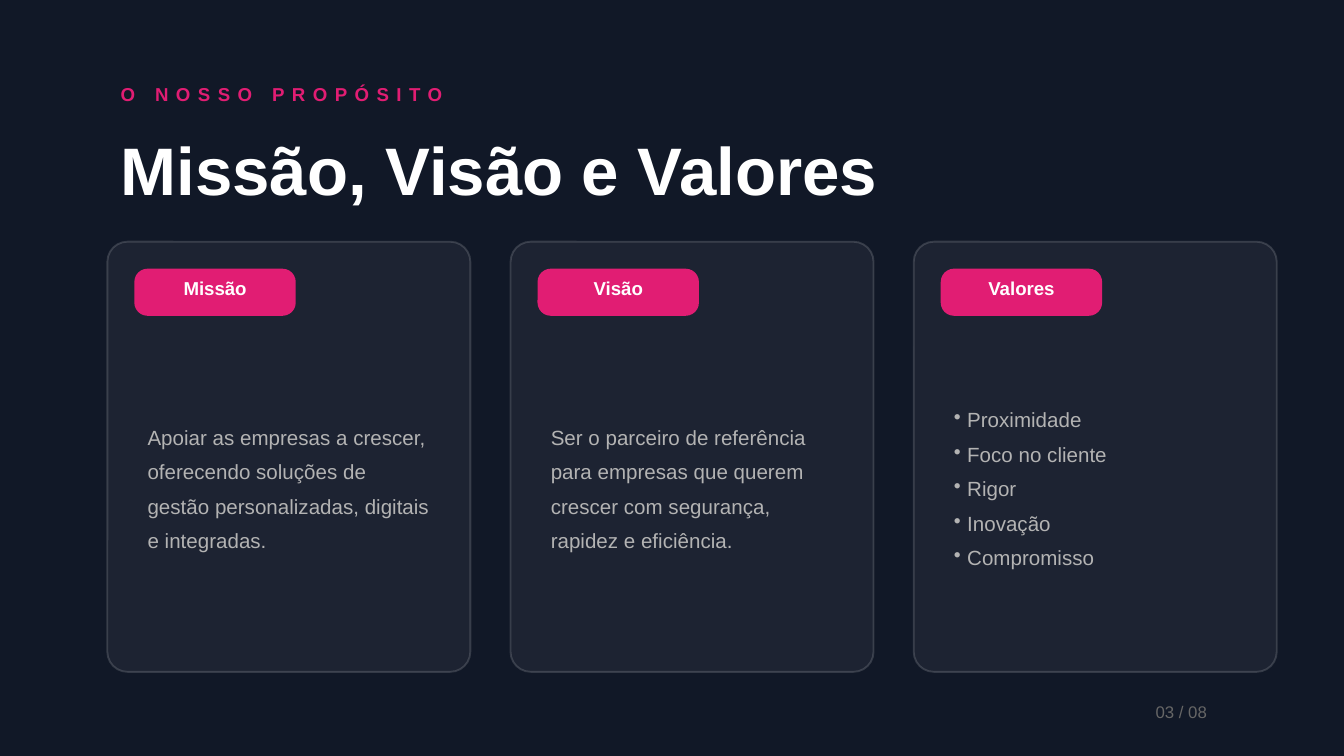
from lxml import etree
from pptx import Presentation
from pptx.dml.color import RGBColor
from pptx.enum import shapes, text
from pptx.oxml import ns
from pptx.util import Cm, Pt

COLORS = {
    "back": "111827",
    "pink": "E11D73",
    "white": "FFFFFF",
    "body": "B3B3B3",
    "muted": "666666",
}
CARDS = [
    ("Missão", ["Apoiar as empresas a crescer, oferecendo soluções de "
                "gestão personalizadas, digitais e integradas."], False),
    ("Visão", ["Ser o parceiro de referência para empresas que querem "
               "crescer com segurança, rapidez e eficiência."], False),
    ("Valores", ["Proximidade", "Foco no cliente", "Rigor", "Inovação",
                 "Compromisso"], True),
]
LEFT, TOP, PITCH, PAD = 2.03, 4.57, 7.62, 0.51


def color(name):
    return RGBColor.from_string(COLORS[name])


def add_bullet(para):
    props = para._p.get_or_add_pPr()
    props.set("marL", str(Cm(0.25)))
    props.set("indent", str(-Cm(0.25)))
    etree.SubElement(props, ns.qn("a:buChar"), char="•")


def fade(part, percent):
    """Set the opacity of a solid fill or line element."""
    tone = part.find(".//" + ns.qn("a:srgbClr"))
    etree.SubElement(tone, ns.qn("a:alpha"), val=str(percent * 1000))


def add_text(slide, lines, x, y, w, h, size, tone, bold=False,
             align=None, leading=None, track=None, bullet=False):
    box = slide.shapes.add_textbox(Cm(x), Cm(y), Cm(w), Cm(h))
    frame = box.text_frame
    frame.word_wrap = True
    frame.vertical_anchor = text.MSO_ANCHOR.MIDDLE
    for i, line in enumerate(lines):
        para = frame.paragraphs[0] if i == 0 else frame.add_paragraph()
        para.alignment = align
        para.line_spacing = leading
        if bullet:
            add_bullet(para)
        run = para.add_run()
        run.text = line
        font = run.font
        font.name, font.size, font.bold = "Arial", Pt(size), bold
        font.color.rgb = color(tone)
        if track:
            run._r.get_or_add_rPr().set("spc", str(track * 100))


def add_panel(slide, x, y, w, h, round_by, tone):
    panel = slide.shapes.add_shape(
        shapes.MSO_SHAPE.ROUNDED_RECTANGLE, Cm(x), Cm(y), Cm(w), Cm(h))
    panel.adjustments[0] = round_by / min(w, h)
    panel.shadow.inherit = False
    panel.fill.solid()
    panel.fill.fore_color.rgb = color(tone)
    panel.line.fill.background()
    return panel


def add_card(slide, x, title, lines, bullet):
    card = add_panel(slide, x, TOP, 6.86, 8.13, 0.38, "white")
    card.line.color.rgb = color("white")
    card.line.width = Pt(1)
    props = card.element.spPr
    fade(props.find(ns.qn("a:solidFill")), 5)
    fade(props.find(ns.qn("a:ln")), 15)

    x += PAD
    add_panel(slide, x, TOP + PAD, 3.05, 0.89, 0.25, "pink")
    add_text(slide, [title], x, TOP + 0.43, 3.05, 0.89, 10, "white",
             bold=True, align=text.PP_ALIGN.CENTER)
    add_text(slide, lines, x, 6.35, 5.84, 5.59, 11, "body",
             leading=1.4, bullet=bullet)


def main():
    deck = Presentation()
    deck.slide_width, deck.slide_height = Cm(25.4), Cm(14.29)
    slide = deck.slides.add_slide(deck.slide_layouts[6])
    slide.background.fill.solid()
    slide.background.fill.fore_color.rgb = color("back")

    add_text(slide, ["O NOSSO PROPÓSITO"], LEFT, 1.27, 20.32, 1.02, 10,
             "pink", bold=True, track=4)
    add_text(slide, ["Missão, Visão e Valores"], LEFT, 2.29, 20.32, 1.78, 36,
             "white", bold=True)
    for i, (title, lines, bullet) in enumerate(CARDS):
        add_card(slide, LEFT + i * PITCH, title, lines, bullet)
    add_text(slide, ["03 / 08"], 21.59, 12.95, 3.05, 1.02, 9, "muted")
    deck.save("out.pptx")


if __name__ == "__main__":
    main()
